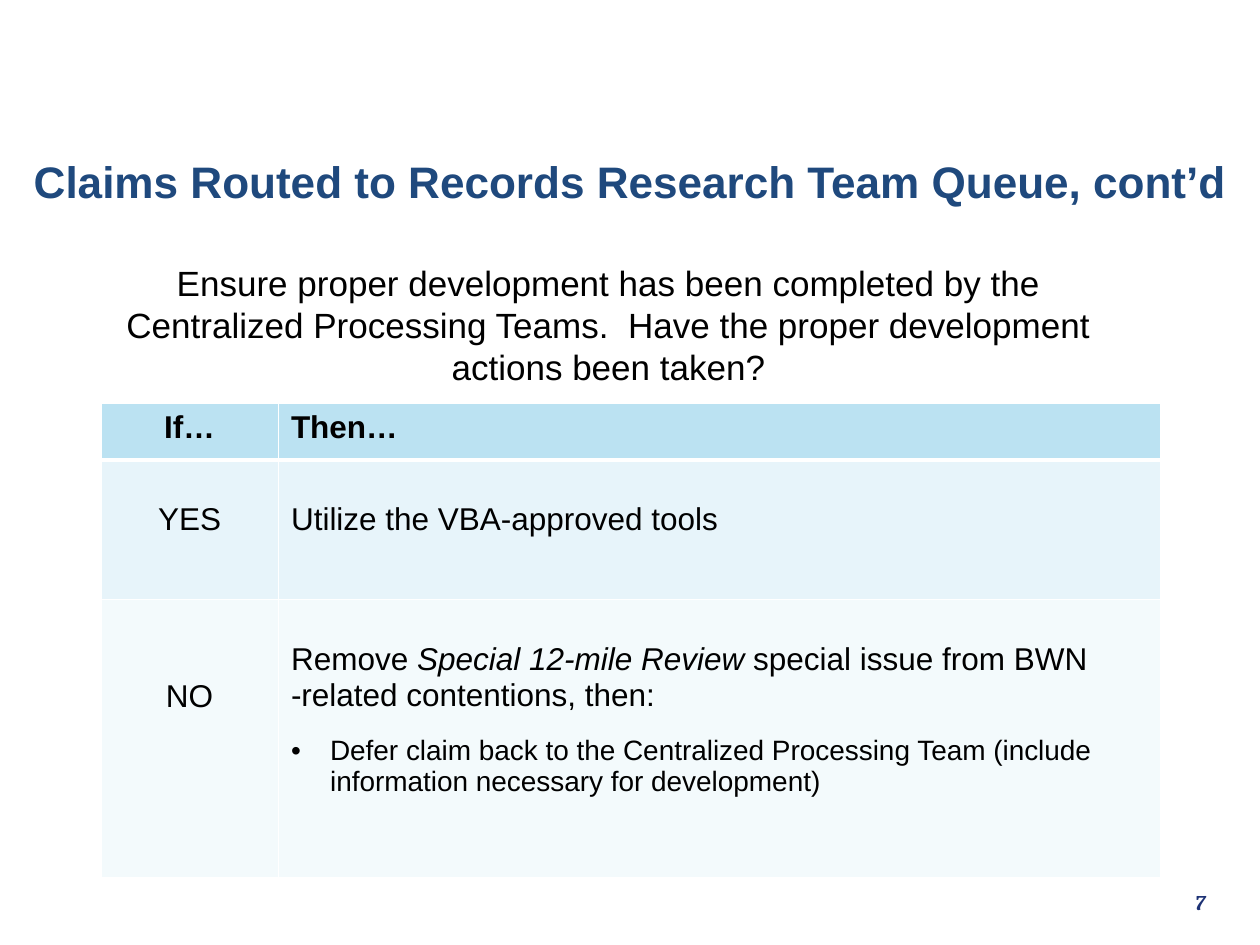
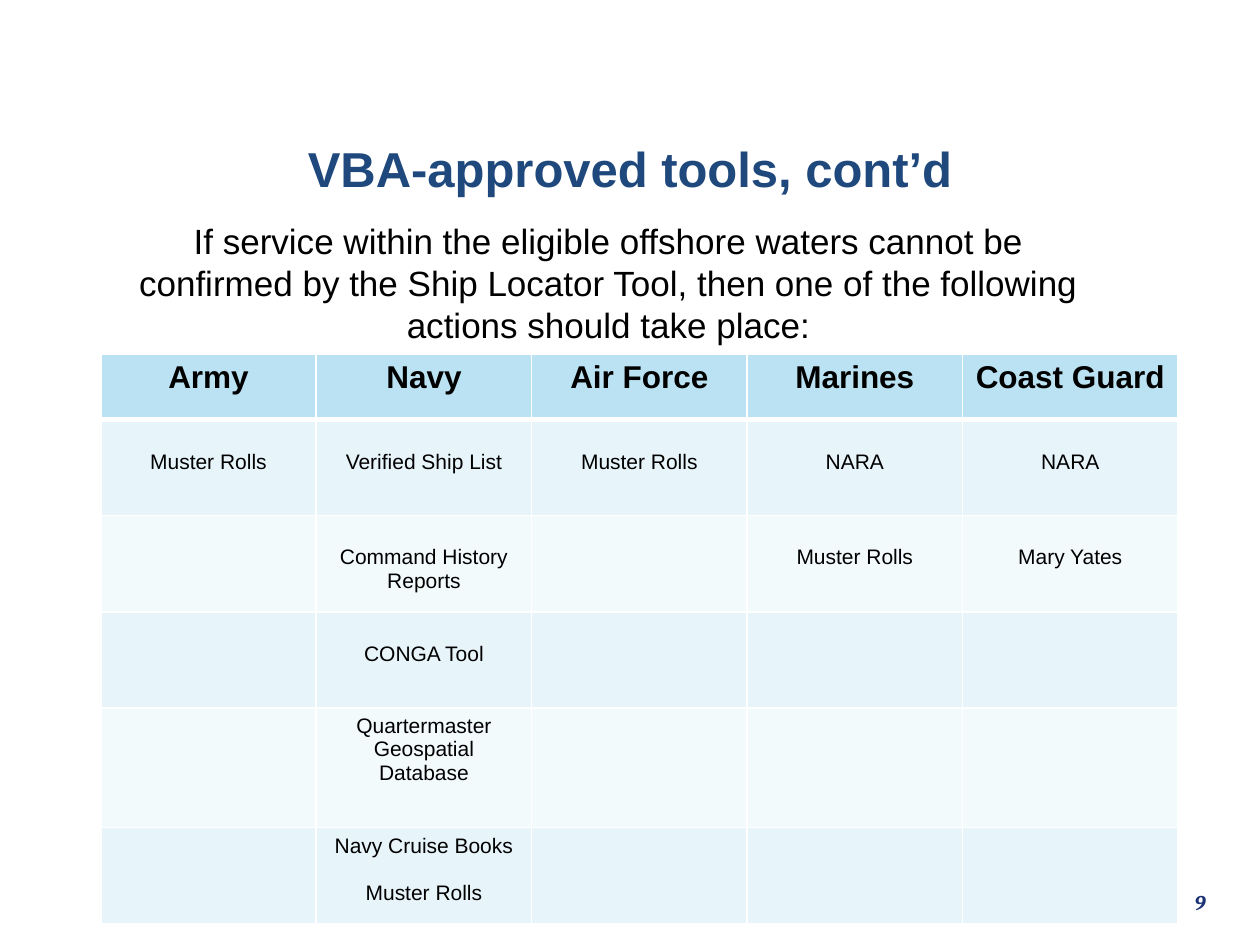
from lxml.etree import SubElement
from pptx import Presentation
from pptx.dml.color import RGBColor
from pptx.enum.text import MSO_ANCHOR, PP_ALIGN as Align
from pptx.oxml.ns import qn
from pptx.util import Inches, Pt

COLORS = {
    "title": "1F497D",
    "number": "1D3275",
    "text": "000000",
    "header": "BBE2F2",
    "odd": "E7F4FA",
    "even": "F3FAFC",
    "border": "FFFFFF",
}
LEFT = 0.8
INSET = 0.05
LINE = 1.15  # line height as a multiple of the font size


def rgb(name):
    return RGBColor.from_string(COLORS[name])


def style_paragraph(para, size, align=Align.CENTER, color="text", bold=False,
                    italic=False, font="Arial"):
    para.alignment = align
    for span in para.runs:
        span.font.name = font
        span.font.size = Pt(size)
        span.font.bold = bold
        span.font.italic = italic
        span.font.color.rgb = rgb(color)


def add_page(deck, title, top, size, number):
    """Add a page with its title and page number."""
    page = deck.slides.add_slide(deck.slide_layouts[5])
    heading = page.shapes.title
    heading.left, heading.top = Inches(0), Inches(top)
    heading.width, heading.height = Inches(10), Inches(0.99)
    heading.text_frame.text = title
    heading.text_frame.vertical_anchor = MSO_ANCHOR.MIDDLE
    style_paragraph(heading.text_frame.paragraphs[0], size, color="title", bold=True)

    box = add_text(page, str(number), 9.05, 6.97, 0.95, 0.38)
    box.text_frame.vertical_anchor = MSO_ANCHOR.MIDDLE
    style_paragraph(box.text_frame.paragraphs[0], 12, color="number", bold=True,
                    italic=True, font="Cambria")
    return page


def add_text(page, text, left, top, width, height, size=20):
    box = page.shapes.add_textbox(Inches(left), Inches(top), Inches(width), Inches(height))
    box.text_frame.word_wrap = True
    box.text_frame.text = text
    style_paragraph(box.text_frame.paragraphs[0], size)
    return box


def set_borders(cell, top, bottom):
    properties = cell._tc.get_or_add_tcPr()
    for side, width in (("L", 1), ("R", 1), ("T", top), ("B", bottom)):
        line = SubElement(properties, qn(f"a:ln{side}"), w=str(Pt(width)))
        fill = SubElement(line, qn("a:solidFill"))
        SubElement(fill, qn("a:srgbClr"), val=COLORS["border"])


def lower_text(cell, size, lines):
    """Start the cell's text a number of lines below its top."""
    cell.margin_top = Inches(INSET) + Pt(size * LINE * lines)


def add_grid(page, top, widths, heights, rows, size, aligns):
    """Add a table with a header row and banded body rows."""
    frame = page.shapes.add_table(len(rows), len(widths), Inches(LEFT), Inches(top),
                                  Inches(sum(widths)), Inches(sum(heights)))
    table = frame.table
    for column, width in zip(table.columns, widths):
        column.width = Inches(width)
    for index, (row, height, texts) in enumerate(zip(table.rows, heights, rows)):
        row.height = Inches(height)
        is_header = index == 0
        band = "header" if is_header else "odd" if index % 2 else "even"
        for cell, text, align in zip(row.cells, texts, aligns):
            set_borders(cell, top=3 if index == 1 else 1, bottom=3 if is_header else 1)
            cell.fill.solid()
            cell.fill.fore_color.rgb = rgb(band)
            cell.text_frame.text = text
            for para in cell.text_frame.paragraphs:
                style_paragraph(para, 18 if is_header else size, align, bold=is_header)
            if not is_header:
                lower_text(cell, size, 1)
    return table


def add_bullet(para, indent):
    properties = para._p.get_or_add_pPr()
    properties.set("marL", str(Inches(indent)))
    properties.set("indent", str(-Inches(indent)))
    SubElement(properties, qn("a:buFont"), typeface="Arial")
    SubElement(properties, qn("a:buChar"), char="•")


def fill_removal_cell(cell):
    """Write the instruction with its italic issue name and its bullet."""
    intro = cell.text_frame.paragraphs[0]
    for text in ("Remove ", "Special 12-mile Review ",
                 "special issue from BWN -related contentions, then:"):
        intro.add_run().text = text
    style_paragraph(intro, 18, Align.LEFT)
    intro.runs[1].font.italic = True

    item = cell.text_frame.add_paragraph()
    item.text = ("Defer claim back to the Centralized Processing Team "
                 "(include information necessary for development)")
    item.space_before = Pt(11 * LINE)
    add_bullet(item, 0.31)
    style_paragraph(item, 16, Align.LEFT)


def build_routing_page(deck):
    page = add_page(deck, "Claims Routed to Records Research Team Queue, cont’d",
                    0.94, 25.2, 7)
    add_text(page, "Ensure proper development has been completed by the Centralized "
             "Processing Teams.  Have the proper development actions been taken?",
             LEFT, 2.03, 8.06, 1.1)
    rows = [("If…", "Then…"), ("YES", "Utilize the VBA-approved tools"), ("NO", "")]
    table = add_grid(page, 3.2, [1.41, 7], [0.45, 1.11, 2.21], rows, 18,
                     [Align.CENTER, Align.LEFT])
    lower_text(table.cell(2, 0), 18, 2)
    fill_removal_cell(table.cell(2, 1))


def build_tools_page(deck):
    page = add_page(deck, "VBA-approved tools, cont’d", 0.84, 28, 9)
    add_text(page, "If service within the eligible offshore waters cannot be confirmed "
             "by the Ship Locator Tool, then one of the following actions should take place:",
             LEFT, 1.69, 8.06, 1.11)
    rows = [
        ("Army", "Navy", "Air Force", "Marines", "Coast Guard"),
        ("Muster Rolls", "Verified Ship List", "Muster Rolls", "NARA", "NARA"),
        ("", "Command History Reports", "", "Muster Rolls", "Mary Yates"),
        ("", "CONGA Tool", "", "", ""),
        ("", "Quartermaster Geospatial Database", "", "", ""),
        ("", "Navy Cruise Books\nMuster Rolls", "", "", ""),
    ]
    table = add_grid(page, 2.81, [1.71] * 5, [0.52, 0.76, 0.77, 0.76, 0.95, 0.76],
                     rows, 12, [Align.CENTER] * 5)
    for row in (4, 5):
        lower_text(table.cell(row, 1), 12, 0)
    table.cell(5, 1).text_frame.paragraphs[1].space_before = Pt(12 * LINE)


def main():
    deck = Presentation()
    deck.slide_width, deck.slide_height = Inches(10), Inches(7.5)
    build_routing_page(deck)
    build_tools_page(deck)
    deck.save("out.pptx")


if __name__ == "__main__":
    main()
